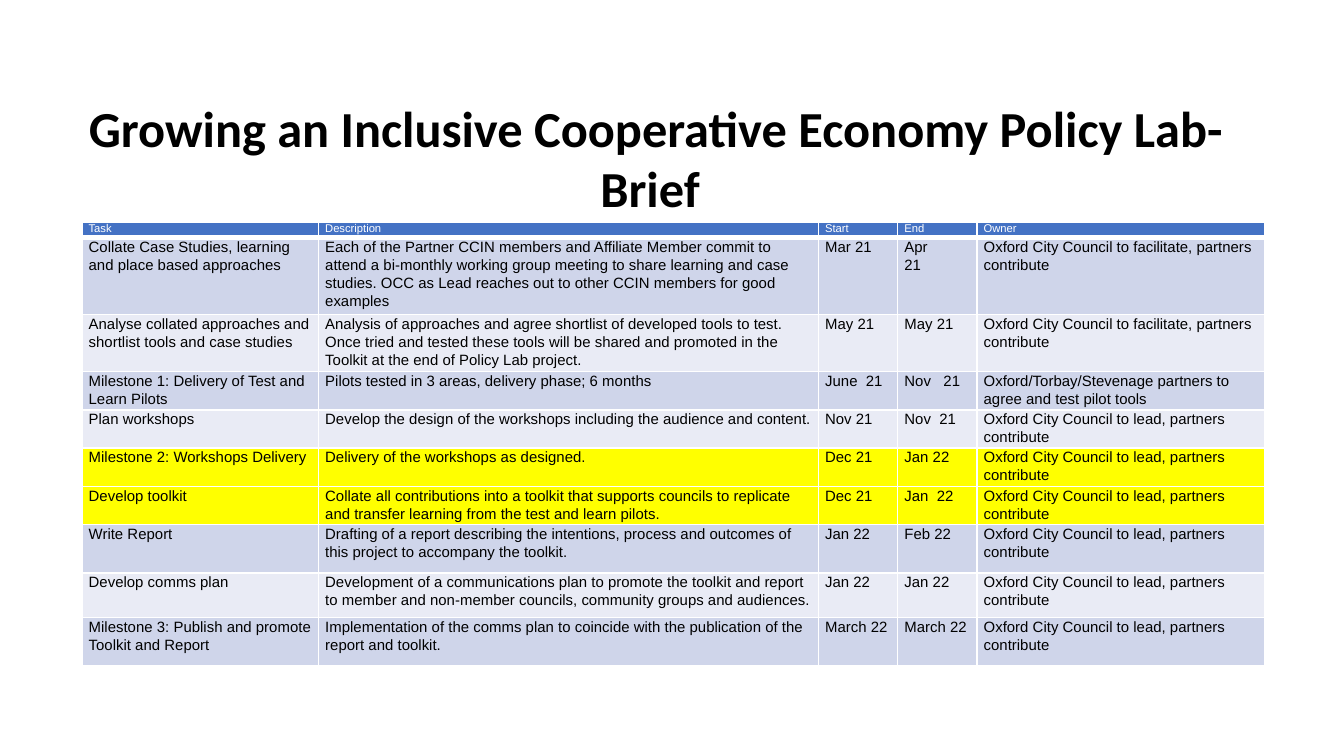
from typing import NamedTuple

from lxml import etree
from pptx import Presentation, util as u
from pptx.dml.color import RGBColor
from pptx.enum import text as t
from pptx.oxml.ns import qn

COLORS = {
    "text": "000000",
    "white": "FFFFFF",
    "header": "4472C4",
    "band_dark": "CFD5EA",
    "band_light": "E9EBF5",
    "highlight": "FFFF00",
}
COLUMN_WIDTHS = [1.76, 3.72, 0.59, 0.59, 2.14]
HEADER_HEIGHT = 0.12
FACILITATE = "Oxford City Council to facilitate, partners contribute"
LEAD = "Oxford City Council to lead, partners contribute"


class Task(NamedTuple):
    name: str
    description: str
    start: str
    end: str
    owner: str = LEAD
    height: float = 0.28
    highlighted: bool = False


HEADINGS = ["Task", "Description", "Start", "End", "Owner"]
TASKS = [
    Task("Collate Case Studies, learning and place based approaches",
         "Each of the Partner CCIN members and Affiliate Member commit to attend a "
         "bi-monthly working group meeting to share learning and case studies. OCC as "
         "Lead reaches out to other CCIN members for good examples",
         "Mar 21", "Apr\n21", FACILITATE, 0.43),
    Task("Analyse collated approaches and shortlist tools and case studies",
         "Analysis of approaches and agree shortlist of developed tools to test. Once "
         "tried and tested these tools will be shared and promoted in the Toolkit at "
         "the end of Policy Lab project.",
         "May 21", "May 21", FACILITATE, 0.42),
    Task("Milestone 1: Delivery of Test and Learn Pilots",
         "Pilots tested in 3 areas, delivery phase; 6 months",
         "June  21", "Nov   21",
         "Oxford/Torbay/Stevenage partners to agree and test pilot tools"),
    Task("Plan workshops",
         "Develop the design of the workshops including the audience and content.",
         "Nov 21", "Nov  21"),
    Task("Milestone 2: Workshops Delivery", "Delivery of the workshops as designed.",
         "Dec 21", "Jan 22", highlighted=True),
    Task("Develop toolkit",
         "Collate all contributions into a toolkit that supports councils to replicate "
         "and transfer learning from the test and learn pilots.",
         "Dec 21", "Jan  22", highlighted=True),
    Task("Write Report",
         "Drafting of a report describing the intentions, process and outcomes of this "
         "project to accompany the toolkit.",
         "Jan 22", "Feb 22", height=0.36),
    Task("Develop comms plan",
         "Development of a communications plan to promote the toolkit and report to "
         "member and non-member councils, community groups and audiences.",
         "Jan 22", "Jan 22", height=0.33),
    Task("Milestone 3: Publish and promote Toolkit and Report",
         "Implementation of the comms plan to coincide with the publication of the "
         "report and toolkit.",
         "March 22", "March 22", height=0.36),
]


def write_text(frame, content: str, *, size: float, font: str = "Arial",
               color: str = "text", bold: bool = False,
               align=t.PP_ALIGN.LEFT, spacing: float = 1.0) -> None:
    """Fill a text frame, one paragraph for each line of content."""
    frame.word_wrap = True
    for index, line in enumerate(content.split("\n")):
        paragraph = frame.add_paragraph() if index else frame.paragraphs[0]
        paragraph.alignment = align
        paragraph.line_spacing = spacing
        run = paragraph.add_run()
        run.text = line
        run.font.name = font
        run.font.size = u.Pt(size)
        run.font.bold = bold
        run.font.color.rgb = RGBColor.from_string(COLORS[color])


def add_borders(cell, color: str, widths: dict[str, float]) -> None:
    """Draw the sides L, R, T and B with widths in points."""
    properties = cell._tc.get_or_add_tcPr()
    for side, width in widths.items():
        line = etree.SubElement(properties, qn(f"a:ln{side}"), w=str(u.Pt(width)))
        fill = etree.SubElement(line, qn("a:solidFill"))
        etree.SubElement(fill, qn("a:srgbClr"), val=COLORS[color])


def fill_cell(cell, content: str, fill: str, size: float, color: str) -> None:
    cell.margin_left = cell.margin_right = u.Inches(0.05)
    cell.margin_top = cell.margin_bottom = u.Inches(0)
    cell.fill.solid()
    cell.fill.fore_color.rgb = RGBColor.from_string(COLORS[fill])
    write_text(cell.text_frame, content, size=size, color=color, spacing=1.07)


def add_title(slide) -> None:
    title = slide.shapes.add_textbox(
        u.Inches(0.35), u.Inches(0.67), u.Inches(9.06), u.Inches(1.01))
    write_text(title.text_frame,
               "Growing an Inclusive Cooperative Economy Policy Lab-\nBrief ",
               size=27, font="Calibri", bold=True, align=t.PP_ALIGN.CENTER)
    title.text_frame.auto_size = t.MSO_AUTO_SIZE.SHAPE_TO_FIT_TEXT


def add_plan(slide) -> None:
    heights = [HEADER_HEIGHT] + [task.height for task in TASKS]
    plan = slide.shapes.add_table(
        len(heights), len(COLUMN_WIDTHS), u.Inches(0.61), u.Inches(1.65),
        u.Inches(sum(COLUMN_WIDTHS)), u.Inches(sum(heights))).table
    plan.horz_banding = False
    for column, width in zip(plan.columns, COLUMN_WIDTHS):
        column.width = u.Inches(width)
    for row, height in zip(plan.rows, heights):
        row.height = u.Inches(height)

    # Header row
    for cell, heading in zip(plan.rows[0].cells, HEADINGS):
        add_borders(cell, "white", {"L": 1, "R": 1, "T": 1, "B": 3})
        fill_cell(cell, heading, "header", 6, "white")

    # Task rows in alternating bands, some highlighted
    for number, task in enumerate(TASKS, start=1):
        band = "band_dark" if number % 2 else "band_light"
        fill = "highlight" if task.highlighted else band
        for cell, content in zip(plan.rows[number].cells, task[:5]):
            add_borders(cell, "white", dict.fromkeys("LRTB", 1))
            fill_cell(cell, content, fill, 8, "text")


def main() -> None:
    deck = Presentation()
    deck.slide_width = u.Inches(10)
    deck.slide_height = deck.slide_width * 9 // 16
    slide = deck.slides.add_slide(deck.slide_layouts[6])
    add_title(slide)
    add_plan(slide)
    deck.save("out.pptx")


if __name__ == "__main__":
    main()
